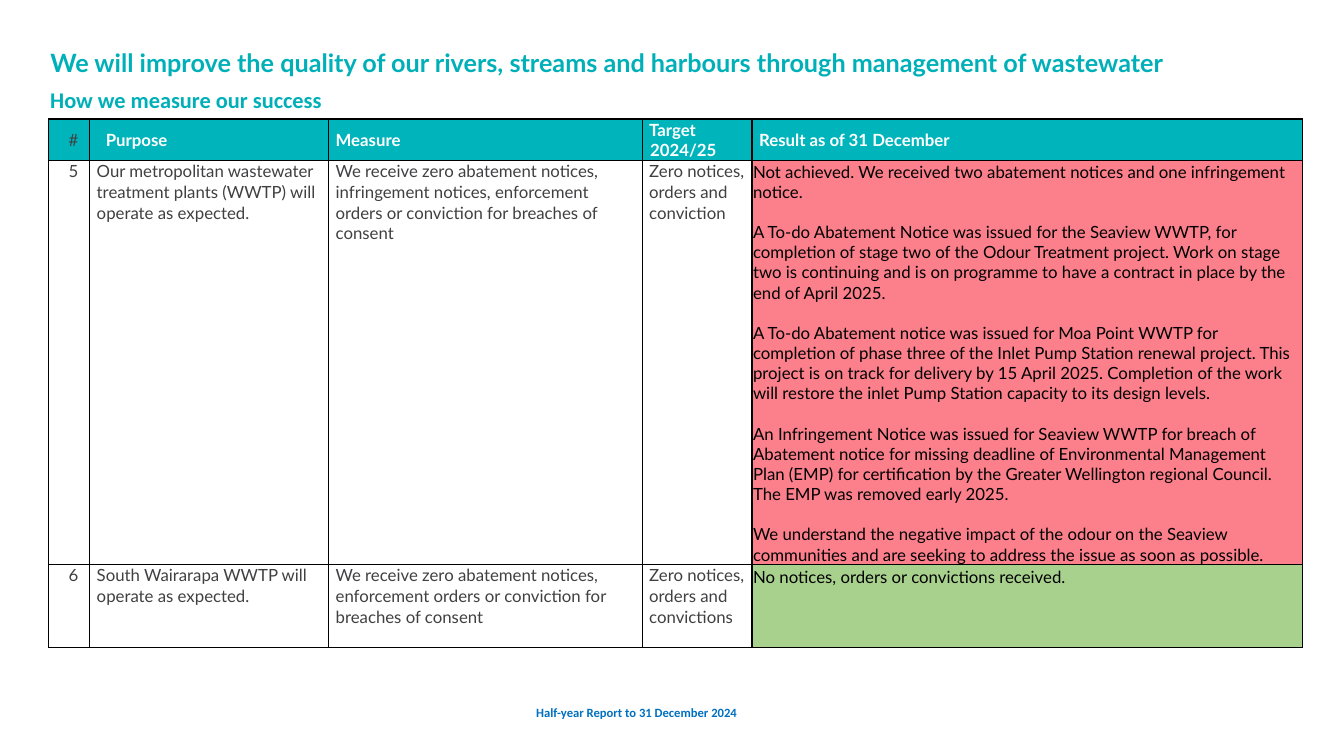
from pptx import Presentation
from pptx.dml.color import RGBColor
from pptx.enum.text import MSO_ANCHOR, MSO_AUTO_SIZE, PP_ALIGN
from pptx.oxml import parse_xml
from pptx.oxml.ns import nsdecls
from pptx.util import Inches, Pt

TEAL = RGBColor(0x00, 0xB0, 0xB9)
HEAD = RGBColor(0x00, 0xB4, 0xBC)
BLUE = RGBColor(0x00, 0x70, 0xC0)
GREY = RGBColor(0x40, 0x40, 0x42)
WHITE = RGBColor(0xFF, 0xFF, 0xFF)
BLACK = RGBColor(0x00, 0x00, 0x00)
RED = RGBColor(0xFC, 0x80, 0x8C)
GREEN = RGBColor(0xA9, 0xD1, 0x8E)

WIDTHS = [0.41, 2.37, 3.11, 1.09, 5.46]
HEIGHTS = [0.4, 4.01, 0.82]
FILLS = [HEAD, RED, GREEN]
NOTICES = [
    "Not achieved. We received two abatement notices and one infringement notice.",
    "A To-do Abatement Notice was issued for the Seaview WWTP, for completion of stage two of the Odour Treatment project. Work on stage two is continuing and is on programme to have a contract in place by the end of April 2025.",
    "A To-do Abatement notice was issued for Moa Point WWTP for completion of phase three of the Inlet Pump Station renewal project. This project is on track for delivery by 15 April 2025. Completion of the work will restore the inlet Pump Station capacity to its design levels.",
    "An Infringement Notice was issued for Seaview WWTP for breach of Abatement notice for missing deadline of Environmental Management Plan (EMP) for certification by the Greater Wellington regional Council. The EMP was removed early 2025.",
    "We understand the negative impact of the odour on the Seaview communities and are seeking to address the issue as soon as possible.",
]
ROWS = [
    ["#", "Purpose", "Measure", "Target\v2024/25", "Result as of 31 December"],
    [
        "5",
        "Our metropolitan wastewater treatment plants (WWTP) will operate as expected.",
        "We receive zero abatement notices, infringement notices, enforcement orders or conviction for breaches of consent",
        "Zero notices, orders and conviction",
        "\n".join(NOTICES),
    ],
    [
        "6",
        "South Wairarapa WWTP will operate as expected.",
        "We receive zero abatement notices, enforcement orders or conviction for breaches of consent",
        "Zero notices, orders and convictions",
        "No notices, orders or convictions received.",
    ],
]


class Page:
    font = "Lato"

    def __init__(self, deck):
        self.slide = deck.slides.add_slide(deck.slide_layouts[5])

    def style(self, para, size, color, bold=False, font=None):
        for run in para.runs:
            run.font.name = font or self.font
            run.font.size = Pt(size)
            run.font.bold = bold
            run.font.color.rgb = color

    def place(self, shape, box, text, size, color, font):
        shape.left, shape.top, shape.width, shape.height = map(Inches, box)
        frame = shape.text_frame
        frame.text = text
        frame.word_wrap = True
        frame.auto_size = MSO_AUTO_SIZE.NONE
        frame.vertical_anchor = MSO_ANCHOR.TOP
        para = frame.paragraphs[0]
        para.alignment = PP_ALIGN.LEFT
        self.style(para, size, color, True, font)
        return para

    def title(self, box, text, size, color):
        self.place(self.slide.shapes.title, box, text, size, color, self.font)

    def label(self, box, text, size, color, font):
        shape = self.slide.shapes.add_textbox(*map(Inches, box))
        return self.place(shape, box, text, size, color, font)

    def border(self, cell):
        props = cell._tc.get_or_add_tcPr()
        for at, side in enumerate(("lnL", "lnR", "lnT", "lnB")):
            props.insert(at, parse_xml(
                f'<a:{side} {nsdecls("a")} w="12700"><a:solidFill>'
                f'<a:srgbClr val="{BLACK}"/></a:solidFill></a:{side}>'))

    def cell(self, cell, text, row, col):
        head = row == 0
        result = col == 4 and not head
        cell.text = text
        cell.vertical_anchor = MSO_ANCHOR.MIDDLE if head else MSO_ANCHOR.TOP
        cell.margin_left = cell.margin_right = Inches(0.01 if result else 0.07)
        cell.margin_top = Inches(0.01 if result else 0)
        cell.margin_bottom = 0
        if head or result:
            cell.fill.solid()
            cell.fill.fore_color.rgb = FILLS[row]
        else:
            cell.fill.background()
        paras = cell.text_frame.paragraphs
        for para in paras:
            if result:
                para.space_after = Pt(14.4 if para is not paras[-1] else 0)
                para.line_spacing = 1.07 if row == 2 else 1.0
            else:
                para.space_after = Pt(5.2)
                para.line_spacing = 1.03
                wide = col == 0 or head and col == 1
                left = 0.1 if wide else 0.01 if head else 0
                props = para._p.get_or_add_pPr()
                props.set("marL", str(Inches(left)))
                props.set("indent", str(Inches(-0.01)))
            para.alignment = PP_ALIGN.CENTER if col == 0 else PP_ALIGN.LEFT
            white = head and col > 0
            color = BLACK if result else WHITE if white else GREY
            self.style(para, 12, color, white)
        self.border(cell)

    def table(self, left, top, rows):
        size = map(Inches, (left, top, sum(WIDTHS), sum(HEIGHTS)))
        grid = self.slide.shapes.add_table(len(rows), len(WIDTHS), *size).table
        grid.horz_banding = False
        for col, width in zip(grid.columns, WIDTHS):
            col.width = Inches(width)
        for row, height in zip(grid.rows, HEIGHTS):
            row.height = Inches(height)
        for r, row in enumerate(rows):
            for c, text in enumerate(row):
                self.cell(grid.cell(r, c), text, r, c)


def main():
    deck = Presentation()
    deck.slide_width = Inches(13.33)
    deck.slide_height = Inches(7.5)
    page = Page(deck)
    page.title(
        (0.4, 0.42, 11.41, 0.4),
        "We will improve the quality of our rivers, streams and harbours through management of wastewater",
        18, TEAL)
    foot = page.label((5.22, 6.96, 2.57, 0.24),
                      "Half-year Report to 31 December 2024", 9, BLUE, "Calibri")
    foot.line_spacing = 0.9
    page.table(0.48, 1.18, ROWS)
    page.label((0.4, 0.81, 5.96, 0.37), "How we measure our success",
               16, TEAL, "Calibri")
    deck.save("out.pptx")


if __name__ == "__main__":
    main()
